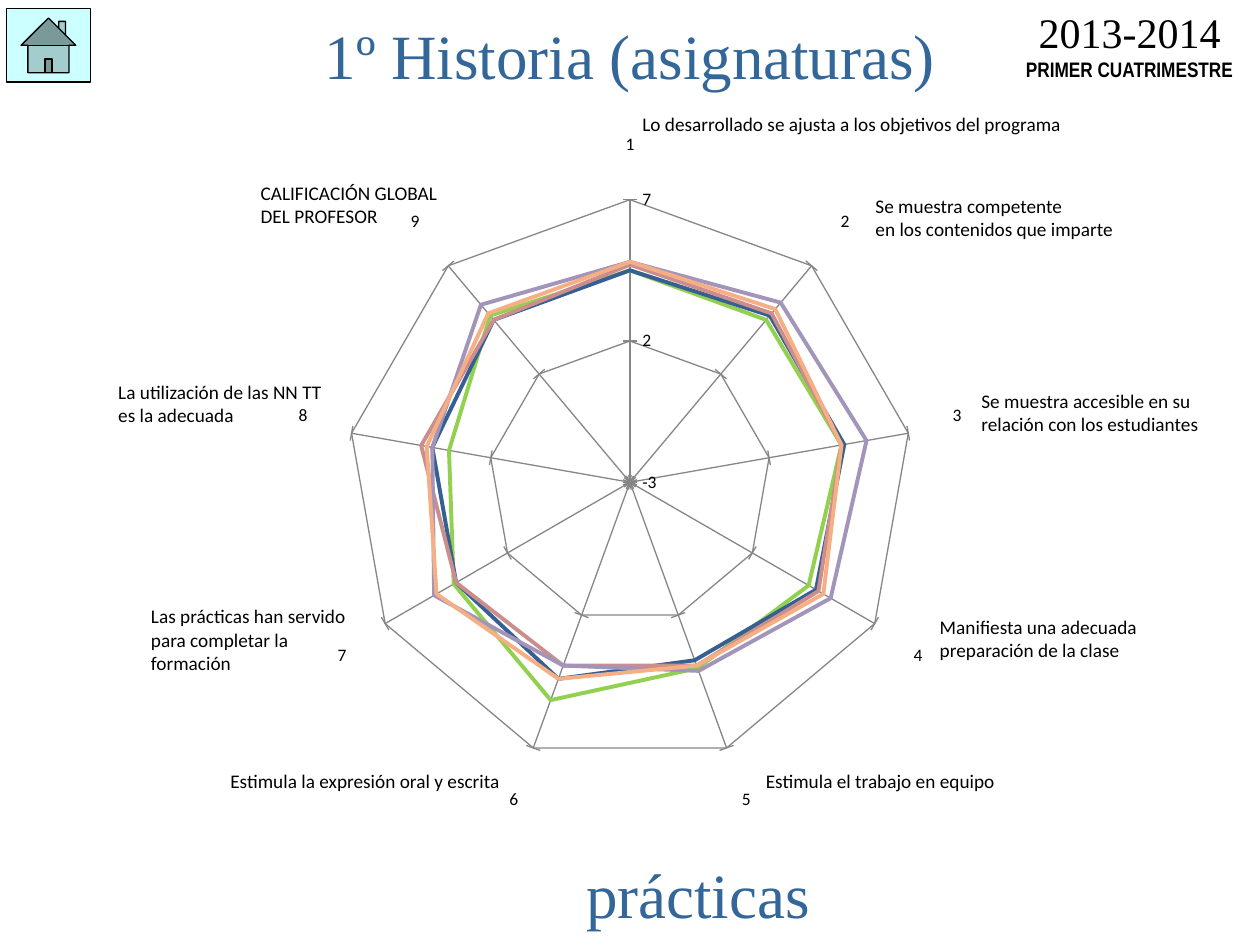
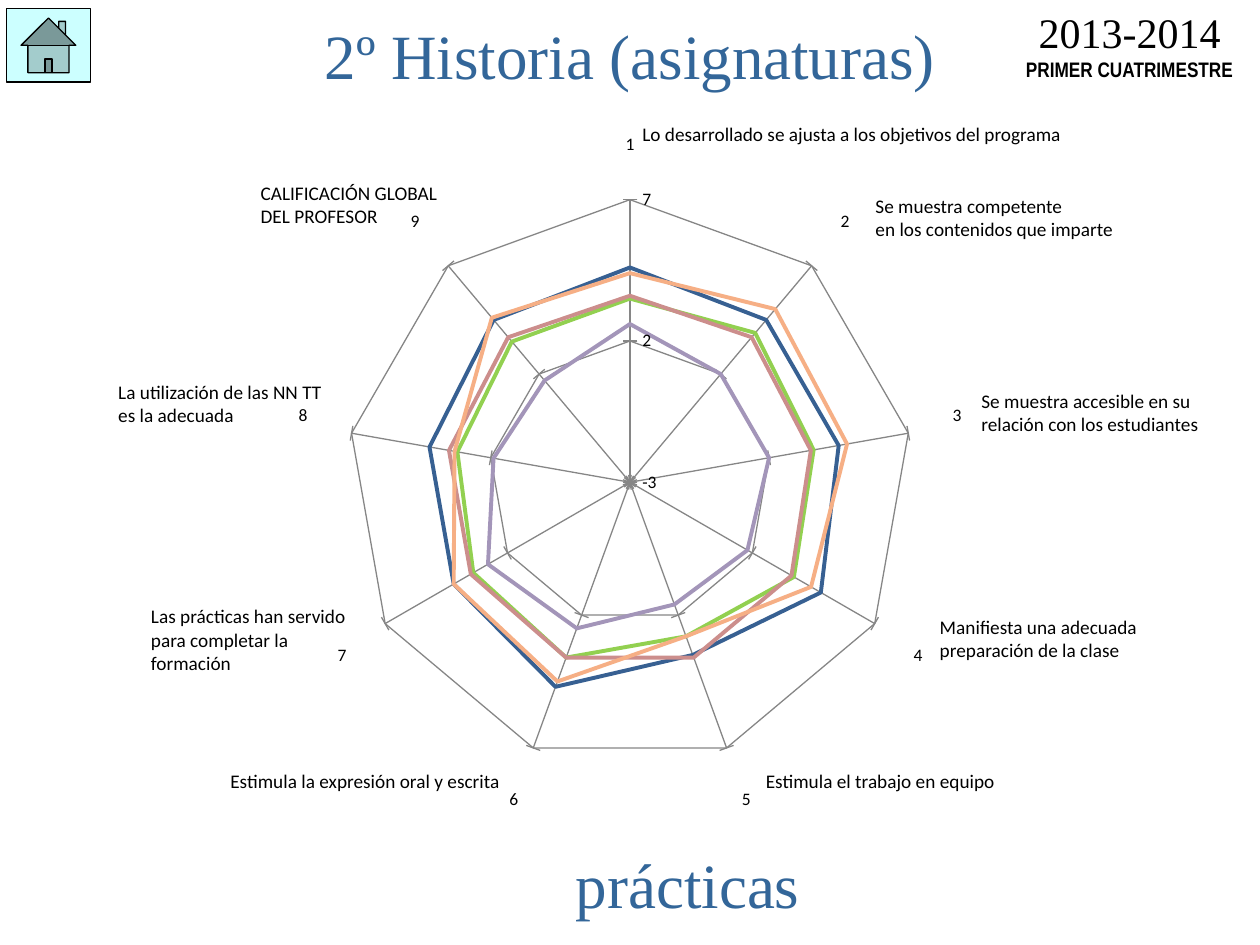
"""Builds two radar slides on how students rate the courses of a history degree."""
import pptx
import pptx.chart.data
import pptx.dml.color
import pptx.enum.chart
import pptx.enum.shapes
import pptx.enum.text
import pptx.oxml.ns
import pptx.util

COLS, ROWS = 100, 75
HUES = {"title": "336699", "ink": "000000", "home": "CCFFFF", "grid": "868686"}
LINES = {"Series 1": "92D050", "Series 2": "376092", "Series 3": "CC8E8C",
         "Series 4": "A395B9", "Series 5": "F6AF85"}
SERIF, SANS, SLIM = "Times New Roman", "Calibri", "Arial Narrow"
LABELS = [
    (["Se muestra accesible en su", "relación con los estudiantes"], 76.9, 30.4, 20.9),
    (["Manifiesta una adecuada", "preparación de la clase"], 73.6, 48.3, 19.1),
    (["Estimula el trabajo en equipo"], 59.8, 60.6, 21.7),
    (["Estimula la expresión oral y escrita"], 17.3, 60.6, 25.6),
    (["Las prácticas han servido", "para completar la", "formación"], 11, 47.5, 19.3),
    (["La utilización de las NN TT", "es la adecuada"], 8.4, 29.7, 20.3),
    (["CALIFICACIÓN GLOBAL", "DEL PROFESOR"], 19.7, 13.9, 19.3),
    (["Se muestra competente", "en los contenidos que imparte"], 68.5, 14.9, 21.3),
]
PAGES = [
    {"title": "1º Historia (asignaturas)", "foot": (42.9, 67.4), "goal": 8.4, "marks": [
        (4.5, 4.5, 4.6, 4.3, 4, 5.2, 4.2, 3.5, 4.7),
        (4.5, 4.7, 4.7, 4.6, 3.7, 4.4, 4.1, 4.1, 4.5),
        (4.7, 4.8, 4.6, 4.7, 3.9, 3.9, 4.1, 4.5, 4.5),
        (4.8, 5.3, 5.5, 5.2, 4.1, 3.9, 5, 4.1, 5.2),
        (4.8, 5, 4.6, 4.9, 3.9, 4.4, 4.9, 4.3, 4.8)]},
    {"title": "2º Historia (asignaturas)", "foot": (42.1, 66.6), "goal": 9.2, "marks": [
        (3.5, 3.9, 3.6, 3.7, 2.8, 3.6, 3.4, 3.2, 3.5),
        (4.6, 4.5, 4.5, 4.8, 3.5, 4.7, 4.2, 4.2, 4.5),
        (3.6, 3.7, 3.5, 3.6, 3.6, 3.6, 3.5, 3.5, 3.7),
        (2.6, 2, 2, 1.8, 1.6, 2.5, 2.8, 1.9, 1.7),
        (4.4, 5, 4.8, 4.4, 2.8, 4.5, 4.2, 3.3, 4.6)]},
]

deck = pptx.Presentation()
deck.slide_width = pptx.util.Inches(10)
deck.slide_height = pptx.util.Inches(7.5)


def place(col, row, wide, high):
    """Turn grid cells into slide lengths."""
    across, down = deck.slide_width / COLS, deck.slide_height / ROWS
    return [round(n) for n in (col * across, row * down, wide * across, high * down)]


def write(slide, lines, box, fonts, hue="ink", mid=False):
    """Add a text box whose lines take their (name, size, bold) from fonts in turn."""
    frame = slide.shapes.add_textbox(*place(*box)).text_frame
    frame.word_wrap = False
    frame.text = "\n".join(lines)
    for spot, para in enumerate(frame.paragraphs):
        font = para.runs[0].font
        font.name, size, font.bold = fonts[spot % len(fonts)]
        font.size = pptx.util.Pt(size)
        font.color.rgb = pptx.dml.color.RGBColor.from_string(HUES[hue])
        if mid:
            para.alignment = pptx.enum.text.PP_ALIGN.CENTER
    return frame


for page in PAGES:
    slide = deck.slides.add_slide(deck.slide_layouts[6])

    heads = [(page["title"], (25.2, 0.8, 49.6, 5.7)), ("prácticas", (*page["foot"], 25, 5.7))]
    for words, box in heads:
        frame = write(slide, [words], box, [(SERIF, 36, False)], "title", True)
        frame.margin_left = frame.margin_right = 0

    goal = (["Lo desarrollado se ajusta a los objetivos del programa"], 50, page["goal"], 38.6)
    for lines, col, row, wide in [goal, *LABELS]:
        write(slide, lines, (col, row, wide, 0.9 + 1.87 * len(lines)), [(SANS, 11, False)])

    home = slide.shapes.add_shape(
        pptx.enum.shapes.MSO_SHAPE.ACTION_BUTTON_HOME, *place(0.5, 0.7, 6.7, 5.8))
    home.shadow.inherit = False
    home.fill.solid()
    home.fill.fore_color.rgb = pptx.dml.color.RGBColor.from_string(HUES["home"])
    home.line.color.rgb = pptx.dml.color.RGBColor.from_string(HUES["ink"])
    home.line.width = pptx.util.Pt(0.75)

    write(slide, ["2013-2014", "PRIMER CUATRIMESTRE"], (80.3, 0, 18.7, 7.1),
          [(SERIF, 24, False), (SLIM, 12, True)], mid=True)

    data = pptx.chart.data.CategoryChartData()
    data.categories = [str(n) for n in range(1, 10)]
    for name, marks in zip(LINES, page["marks"]):
        data.add_series(name, marks)
    chart = slide.shapes.add_chart(
        pptx.enum.chart.XL_CHART_TYPE.RADAR, *place(8.6, 9.6, 82.8, 55.8), data).chart
    chart.has_title = chart.has_legend = False
    chart.font.name = SANS
    chart.font.size = pptx.util.Pt(10)
    chart.font.color.rgb = pptx.dml.color.RGBColor.from_string(HUES["ink"])

    rays, rings = chart.category_axis, chart.value_axis
    rings.minimum_scale, rings.maximum_scale, rings.major_unit = -3, 7, 5
    rings.tick_labels.number_format = "0"
    rings.tick_labels.number_format_is_linked = False
    rays.major_tick_mark = pptx.enum.chart.XL_TICK_MARK.OUTSIDE
    rings.major_tick_mark = pptx.enum.chart.XL_TICK_MARK.CROSS
    for axis in (rays, rings):
        axis.has_major_gridlines = True
        for line in (axis.format.line, axis.major_gridlines.format.line):
            line.color.rgb = pptx.dml.color.RGBColor.from_string(HUES["grid"])
            line.width = pptx.util.Pt(0.75)

    for series in chart.plots[0].series:
        line = series.format.line
        line.color.rgb = pptx.dml.color.RGBColor.from_string(LINES[series.name])
        line.width = pptx.util.Pt(2.25)

    area = rays._element.getparent()
    for old in area.findall(pptx.oxml.ns.qn("c:layout")):
        area.remove(old)

deck.save("out.pptx")
